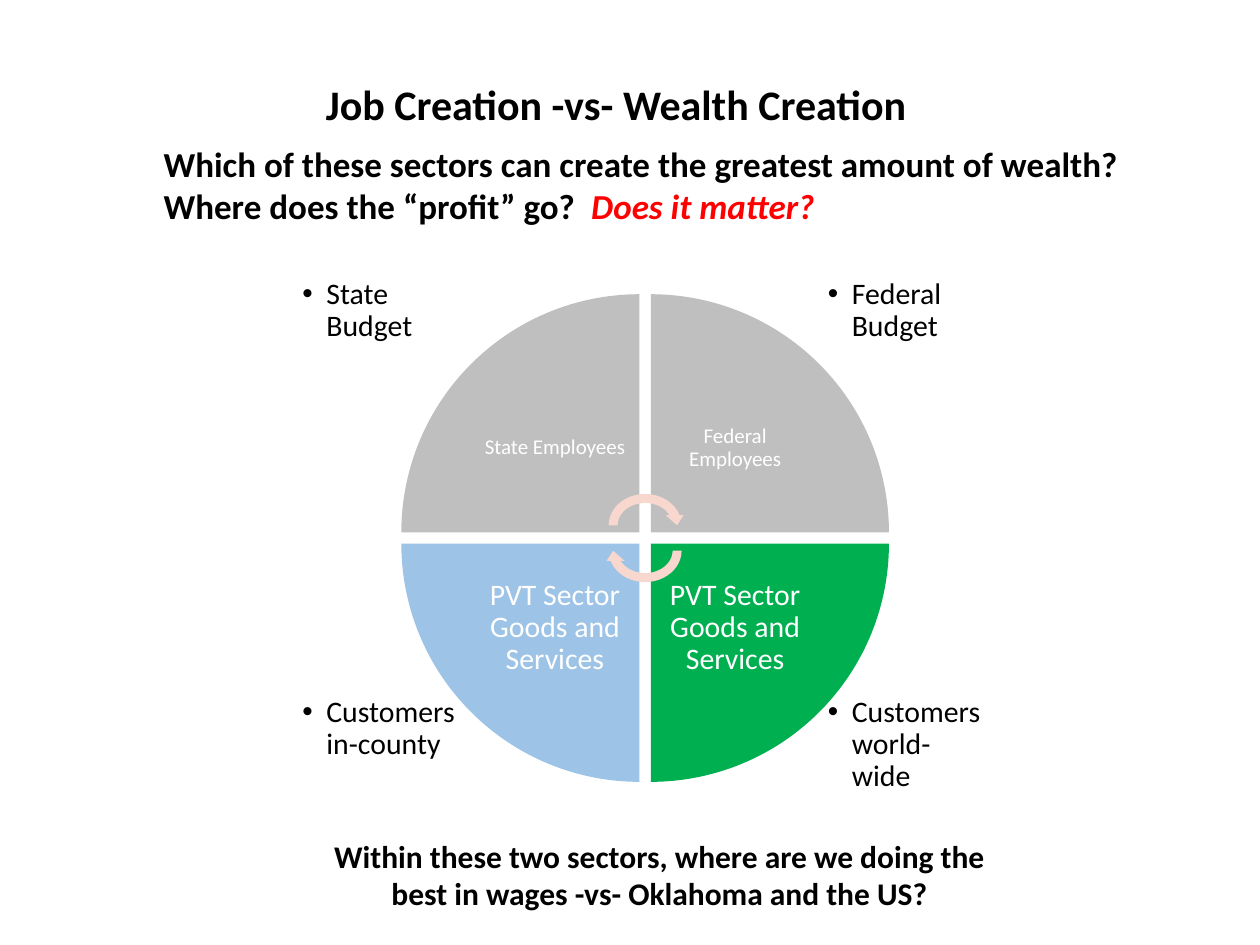
from dataclasses import dataclass

from lxml.etree import SubElement
from pptx import Presentation
from pptx.dml.color import RGBColor
from pptx.enum.shapes import MSO_SHAPE as Preset
from pptx.enum.text import MSO_ANCHOR as Anchor, MSO_AUTO_SIZE as AutoSize, PP_ALIGN as Align
from pptx.oxml.ns import qn
from pptx.util import Inches, Pt


@dataclass(frozen=True)
class Theme:
    font: str = "Calibri"
    ink: str = "000000"
    white: str = "FFFFFF"
    accent: str = "FF0000"
    public: str = "BFBFBF"
    local: str = "9DC3E6"
    world: str = "00B050"
    arrow: str = "F8D7CE"
    title: int = 24
    question: int = 20
    closing: int = 18
    body: int = 17
    small: int = 12


THEME = Theme()
WIDTH, HEIGHT = 10, 7.5

TITLE = "Job Creation -vs- Wealth Creation"
QUESTIONS = [
    ["Which of these sectors can create the greatest amount of wealth?"],
    ["Where does the “profit” go?  ", ("Does it matter?", THEME.accent)],
]
CLOSING = ("Within these two sectors, where are we doing the best in wages "
           "-vs- Oklahoma and the US?")
# column, row, rotation, fill, label, label size, label inset, note
SECTORS = [
    (0, 0, 0, THEME.public, "State Employees", THEME.small, 0.09, "State Budget"),
    (1, 0, 90, THEME.public, "Federal Employees", THEME.small, 0.09, "Federal Budget"),
    (1, 1, 180, THEME.world, "PVT Sector Goods and Services", THEME.body, 0.13,
     "Customers world-wide"),
    (0, 1, 270, THEME.local, "PVT Sector Goods and Services", THEME.body, 0.13,
     "Customers in-county"),
]

CENTER_X, CENTER_Y = 5.12, 4.27
WEDGE, GAP, LABEL = 1.89, 0.09, 1.34
NOTE_LEFTS, NOTE_TOPS = (2.31, 6.48), (2.12, 5.44)
NOTE_SIZE = (1.45, 0.99)
ARROW_SIZE, ARROW_SHIFT = (0.65, 0.57), 0.1


def place(shape, left, top, width, height):
    shape.left, shape.top = Inches(left), Inches(top)
    shape.width, shape.height = Inches(width), Inches(height)


def add_bullet(para, indent):
    properties = para._p.get_or_add_pPr()
    properties.set("marL", str(Inches(indent)))
    properties.set("indent", str(-Inches(indent)))
    SubElement(properties, qn("a:buFont"), typeface="Arial")
    SubElement(properties, qn("a:buChar"), char="•")


def write(box, lines, *, size, color=THEME.ink, bold=False, align=Align.LEFT,
          anchor=Anchor.TOP, insets=(0.1, 0.05), spacing=1.0, bullet=0, wrap=True):
    """Fill box with lines; each line lists plain texts or (text, color) italics."""
    frame = box.text_frame
    frame.auto_size, frame.word_wrap = AutoSize.NONE, wrap
    frame.vertical_anchor = anchor
    frame.margin_left = frame.margin_right = Inches(insets[0])
    frame.margin_top = frame.margin_bottom = Inches(insets[1])
    for number, line in enumerate(lines):
        para = frame.add_paragraph() if number else frame.paragraphs[0]
        para.alignment, para.line_spacing = align, spacing
        if bullet:
            add_bullet(para, bullet)
        for part in line:
            emphasized = isinstance(part, tuple)
            text, tint = part if emphasized else (part, color)
            span = para.add_run()
            span.text = text
            span.font.name, span.font.size = THEME.font, Pt(size)
            span.font.bold, span.font.italic = bold, emphasized
            span.font.color.rgb = RGBColor.from_string(tint)


def add_text(page, at, lines, **style):
    box = page.shapes.add_textbox(*map(Inches, at))
    write(box, lines, **style)


def add_solid(page, preset, at, fill, rotation):
    shape = page.shapes.add_shape(preset, *map(Inches, at))
    shape.rotation = rotation
    shape.shadow.inherit = False
    shape.fill.solid()
    shape.fill.fore_color.rgb = RGBColor.from_string(fill)
    shape.line.fill.background()


def quadrant(column, row, side):
    """Square of the given side in a quadrant, touching the wheel's centre gap."""
    left = CENTER_X + (GAP / 2 if column else -GAP / 2 - side)
    top = CENTER_Y + (GAP / 2 if row else -GAP / 2 - side)
    return left, top, side, side


def add_wheel(page):
    for column, row, _, _, _, _, _, note in SECTORS:
        add_text(page, (NOTE_LEFTS[column], NOTE_TOPS[row], *NOTE_SIZE), [[note]],
                 size=THEME.body, insets=(0.09, 0.09), spacing=0.9, bullet=0.19)
    for column, row, rotation, fill, label, size, inset, _ in SECTORS:
        add_solid(page, Preset.PIE_WEDGE, quadrant(column, row, WEDGE), fill, rotation)
        add_text(page, quadrant(column, row, LABEL), [[label]], size=size,
                 color=THEME.white, align=Align.CENTER, anchor=Anchor.MIDDLE,
                 insets=(inset, inset), spacing=0.9)
    width, height = ARROW_SIZE
    for rotation, shift in ((0, -ARROW_SHIFT), (180, ARROW_SHIFT)):
        at = (CENTER_X - width / 2, CENTER_Y + shift - height / 2, width, height)
        add_solid(page, Preset.CIRCULAR_ARROW, at, THEME.arrow, rotation)


def main():
    deck = Presentation()
    deck.slide_width, deck.slide_height = Inches(WIDTH), Inches(HEIGHT)
    page = deck.slides.add_slide(deck.slide_layouts[5])

    title = page.shapes.title
    place(title, 2.44, 0.57, 4.9, 0.5)
    write(title, [[TITLE]], size=THEME.title, bold=True, align=Align.CENTER, wrap=False)
    add_wheel(page)
    add_text(page, (1.2, 1.08, 7.84, 0.77), QUESTIONS, size=THEME.question, bold=True)
    add_text(page, (2.49, 6.59, 5.49, 0.71), [[CLOSING]], size=THEME.closing,
             bold=True, align=Align.CENTER)
    deck.save("out.pptx")


if __name__ == "__main__":
    main()
